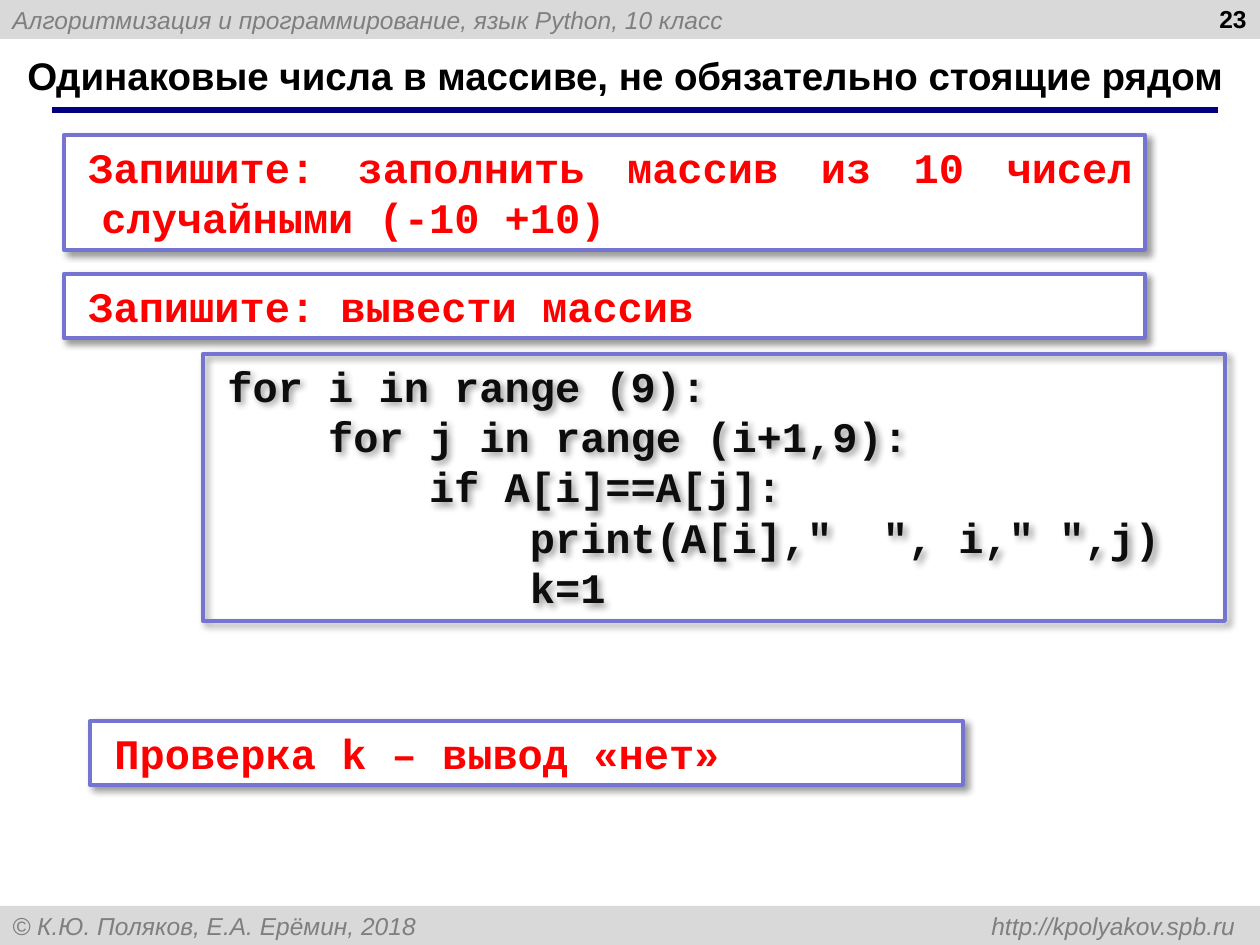
from dataclasses import dataclass

from lxml.etree import SubElement
from pptx import Presentation
from pptx.dml.color import RGBColor
from pptx.enum.shapes import MSO_CONNECTOR as Connector, MSO_SHAPE as Preset
from pptx.enum.text import MSO_ANCHOR as Anchor, MSO_AUTO_SIZE as AutoSize, PP_ALIGN as Align
from pptx.oxml.ns import qn
from pptx.util import Emu, Pt

PX_PER_INCH = 126


@dataclass(frozen=True)
class Theme:
    sans: str = "Arial"
    mono: str = "Courier New"
    small: int = 14
    heading: int = 22
    code: int = 24
    band: str = "D9D9D9"
    muted: str = "7F7F7F"
    rule: str = "000080"
    border: str = "7575D1"
    paper: str = "FFFFFF"
    black: str = "000000"
    task: str = "FF0000"
    program: str = "0D0D0D"


@dataclass(frozen=True)
class Box:
    left: int
    top: int
    width: int
    height: int


@dataclass(frozen=True)
class Panel:
    box: Box
    text: str
    color: str
    filled: bool = True


THEME = Theme()

PROGRAM = """for i in range (9):
    for j in range (i+1,9):
        if A[i]==A[j]:
            print(A[i],"  ", i," ",j)
            k=1"""

PANELS = [
    Panel(Box(64, 135, 1081, 115),
          "Запишите: заполнить массив из 10 чисел случайными (-10 +10)", THEME.task),
    Panel(Box(64, 274, 1081, 64), "Запишите: вывести массив", THEME.task),
    Panel(Box(203, 354, 1022, 267), PROGRAM, THEME.program, filled=False),
    Panel(Box(90, 721, 873, 64), "Проверка k – вывод «нет»", THEME.task),
]


def px(length: int) -> Emu:
    return Emu(round(length * 914400 / PX_PER_INCH))


def place(box: Box) -> tuple:
    return px(box.left), px(box.top), px(box.width), px(box.height)


def style_text(frame, font: str, size: int, color: str, bold=False, italic=False, align=Align.LEFT) -> None:
    for paragraph in frame.paragraphs:
        paragraph.alignment = align
        for run in paragraph.runs:
            run.font.name = font
            run.font.size = Pt(size)
            run.font.bold = bold
            run.font.italic = italic
            run.font.color.rgb = RGBColor.from_string(color)


def add_rect(slide, box: Box, fill: str | None):
    rect = slide.shapes.add_shape(Preset.RECTANGLE, *place(box))
    rect.shadow.inherit = False
    rect.line.fill.background()
    if fill:
        rect.fill.solid()
        rect.fill.fore_color.rgb = RGBColor.from_string(fill)
    else:
        rect.fill.background()
    rect.text_frame.word_wrap = True
    return rect


def add_band(slide, box: Box, text: str):
    frame = add_rect(slide, box, THEME.band).text_frame
    frame.vertical_anchor = Anchor.MIDDLE
    frame.text = text
    style_text(frame, THEME.sans, THEME.small, THEME.muted, italic=True)
    return frame


def add_right_tab(paragraph, position: int) -> None:
    tabs = SubElement(paragraph._p.get_or_add_pPr(), qn("a:tabLst"))
    SubElement(tabs, qn("a:tab"), pos=str(px(position)), algn="r")


def add_label(slide, box: Box, text: str, size: int, align, anchor) -> None:
    frame = slide.shapes.add_textbox(*place(box)).text_frame
    frame.word_wrap = True
    frame.vertical_anchor = anchor
    frame.text = text
    style_text(frame, THEME.sans, size, THEME.black, bold=True, align=align)


def add_drop_shadow(shape) -> None:
    effects = shape._element.spPr.find(qn("a:effectLst"))
    shadow = SubElement(effects, qn("a:outerShdw"), blurRad=str(Pt(4)), dist=str(Pt(3)),
                        dir=str(45 * 60000), algn="tl", rotWithShape="0")
    color = SubElement(shadow, qn("a:srgbClr"), val=THEME.black)
    SubElement(color, qn("a:alpha"), val="40000")


def add_panel(slide, panel: Panel) -> None:
    rect = add_rect(slide, panel.box, THEME.paper if panel.filled else None)
    rect.line.color.rgb = RGBColor.from_string(THEME.border)
    rect.line.width = Pt(2.25)
    add_drop_shadow(rect)
    frame = rect.text_frame
    frame.vertical_anchor = Anchor.TOP
    frame.auto_size = AutoSize.SHAPE_TO_FIT_TEXT
    frame.text = panel.text
    style_text(frame, THEME.mono, THEME.code, panel.color, bold=True, align=Align.JUSTIFY)
    for paragraph in frame.paragraphs:
        properties = paragraph._p.get_or_add_pPr()
        properties.set("marL", str(px(25)))
        properties.set("indent", str(px(-13)))


def add_rule(slide, left: int, right: int, y: int) -> None:
    rule = slide.shapes.add_connector(Connector.STRAIGHT, px(left), px(y), px(right), px(y))
    rule.line.color.rgb = RGBColor.from_string(THEME.rule)
    rule.line.width = Pt(3)
    SubElement(rule._element.spPr, qn("a:effectLst"))


def main() -> None:
    deck = Presentation()
    deck.slide_width, deck.slide_height = px(1260), px(945)
    slide = deck.slides.add_slide(deck.slide_layouts[6])

    # Header and footer bands
    add_band(slide, Box(0, 0, 1260, 39), "Алгоритмизация и программирование, язык Python, 10 класс")
    footer = add_band(slide, Box(0, 906, 1260, 39),
                      "© К.Ю. Поляков, Е.А. Ерёмин, 2018\thttp://kpolyakov.spb.ru")
    add_right_tab(footer.paragraphs[0], 1223)

    # Title, its rule and the page number
    add_rule(slide, 52, 1218, 110)
    add_label(slide, Box(15, 42, 1245, 66), "Одинаковые числа в массиве, не обязательно стоящие рядом",
              THEME.heading, Align.LEFT, Anchor.MIDDLE)
    add_label(slide, Box(965, -2, 294, 66), "23", THEME.small, Align.RIGHT, Anchor.TOP)

    # Tasks and program
    for panel in PANELS:
        add_panel(slide, panel)

    deck.save("out.pptx")


if __name__ == "__main__":
    main()
